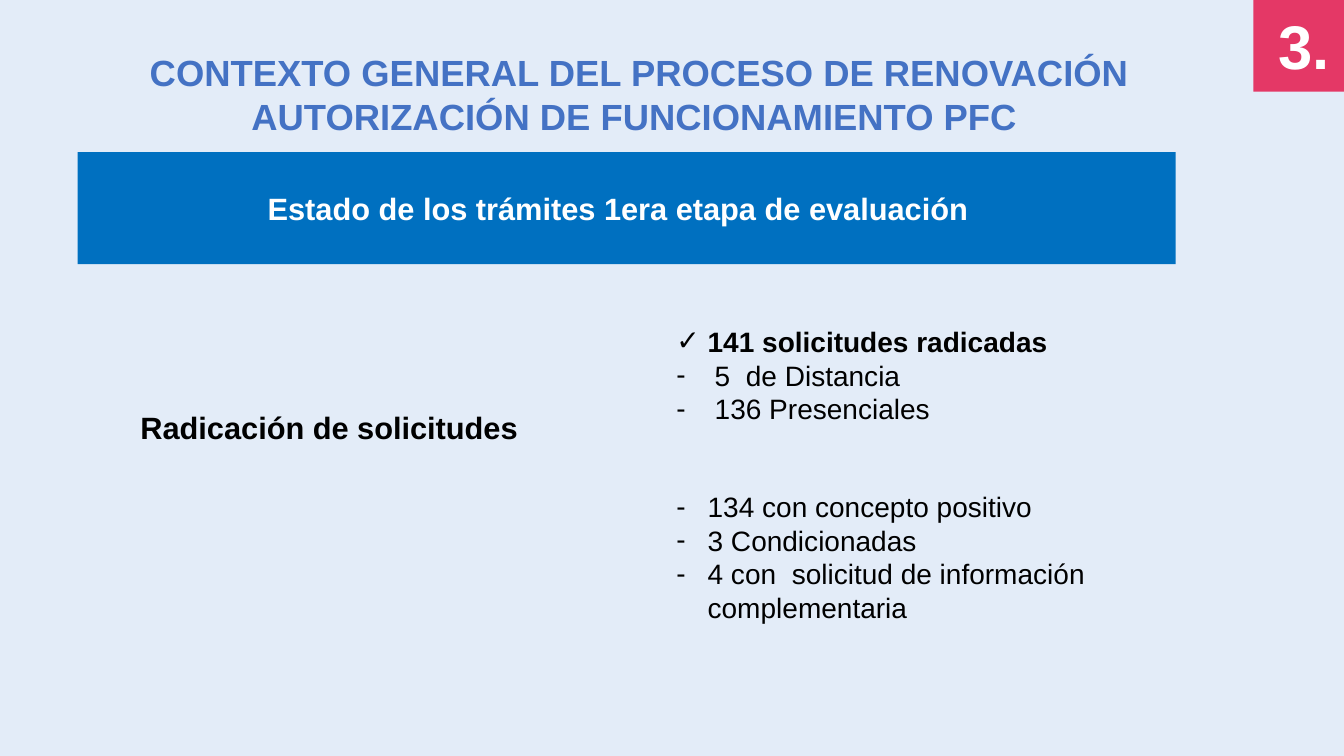
import pptx
import pptx.util
import pptx.dml.color
import pptx.enum.shapes
import pptx.enum.text
import lxml.etree

WIDE, HIGH = 13.33, 7.5
BACK, ROSE, BLUE, INK, WHITE, BLACK = "E3ECF8", "E43866", "0070C0", "4472C4", "FFFFFF", "000000"

# Places are left, top, width and height in percent of the slide.
BLOCKS = [
    {"at": (93.25, 0, 6.75, 12.13), "fill": ROSE},
    {"at": (94.37, 0.4, 5.7, 11.2), "text": "3.", "size": 44, "color": WHITE, "align": "LEFT"},
    {"at": (5.78, 20.13, 81.7, 14.8), "fill": BLUE, "inset": 0.27,
     "text": "Estado de los trámites 1era etapa de evaluación", "size": 22, "color": WHITE},
    {"at": (6.75, 6, 81.7, 13.07), "size": 26, "color": INK,
     "text": "CONTEXTO GENERAL DEL PROCESO DE RENOVACIÓN AUTORIZACIÓN DE FUNCIONAMIENTO PFC "},
    {"at": (5.78, 53.47, 37.43, 6.27), "text": "Radicación de solicitudes", "size": 22, "color": BLACK},
]

LIST_AT = (49.59, 42.27, 37.43, 57.73)
ITEMS = [
    ("✓", "141 solicitudes radicadas", True, 0.31, 0),
    ("-", "5  de Distancia", False, 0.38, 0),
    ("-", "136 Presenciales", False, 0.38, 0),
    ("-", "134 con concepto positivo", False, 0.31, 46),
    ("-", "3 Condicionadas", False, 0.31, 0),
    ("-", "4 con  solicitud de información complementaria", False, 0.31, 0),
]


def paint(fill, color):
    """Give a fill one solid colour."""
    fill.solid()
    fill.fore_color.rgb = pptx.dml.color.RGBColor.from_string(color)


def place(at):
    """Turn percent shares into slide lengths."""
    sides = (WIDE, HIGH, WIDE, HIGH)
    return [pptx.util.Inches(share * side / 100) for share, side in zip(at, sides)]


def write(para, text, size, color, bold):
    """Add one styled run to a paragraph."""
    run = para.add_run()
    run.text = text
    run.font.name = "Arial"
    run.font.size = pptx.util.Pt(size)
    run.font.bold = bold
    paint(run.font.fill, color)


def mark(para, sign, indent):
    """Give a paragraph a bullet with a hanging indent."""
    props = para._p.get_or_add_pPr()
    step = pptx.util.Inches(indent)
    props.set("marL", str(step))
    props.set("indent", str(-step))
    space = pptx.oxml.ns.qn("a:buFont")
    lxml.etree.SubElement(props, space).set("typeface", "Arial")
    lxml.etree.SubElement(props, pptx.oxml.ns.qn("a:buChar")).set("char", sign)


def block(slide, at, fill=None, text=None, size=20, color=BLACK, align="CENTER", inset=0.1):
    """Add a filled rectangle or a text box."""
    if fill:
        shape = slide.shapes.add_shape(pptx.enum.shapes.MSO_SHAPE.RECTANGLE, *place(at))
        shape.shadow.inherit = False
        paint(shape.fill, fill)
        shape.line.fill.background()
    else:
        shape = slide.shapes.add_textbox(*place(at))
    frame = shape.text_frame
    frame.word_wrap = True
    if text:
        frame.margin_right = pptx.util.Inches(inset)
        para = frame.paragraphs[0]
        para.alignment = getattr(pptx.enum.text.PP_ALIGN, align)
        write(para, text, size, color, True)
    return frame


def main():
    """Build and save the slide."""
    deck = pptx.Presentation()
    deck.slide_width, deck.slide_height = pptx.util.Inches(WIDE), pptx.util.Inches(HIGH)
    slide = deck.slides.add_slide(deck.slide_layouts[6])
    paint(slide.background.fill, BACK)
    for item in BLOCKS:
        block(slide, **item)
    frame = block(slide, LIST_AT)
    for row, (sign, text, bold, indent, gap) in enumerate(ITEMS):
        para = frame.add_paragraph() if row else frame.paragraphs[0]
        para.space_before = pptx.util.Pt(gap)
        mark(para, sign, indent)
        write(para, text, 20, BLACK, bold)
    deck.save("out.pptx")


if __name__ == "__main__":
    main()
